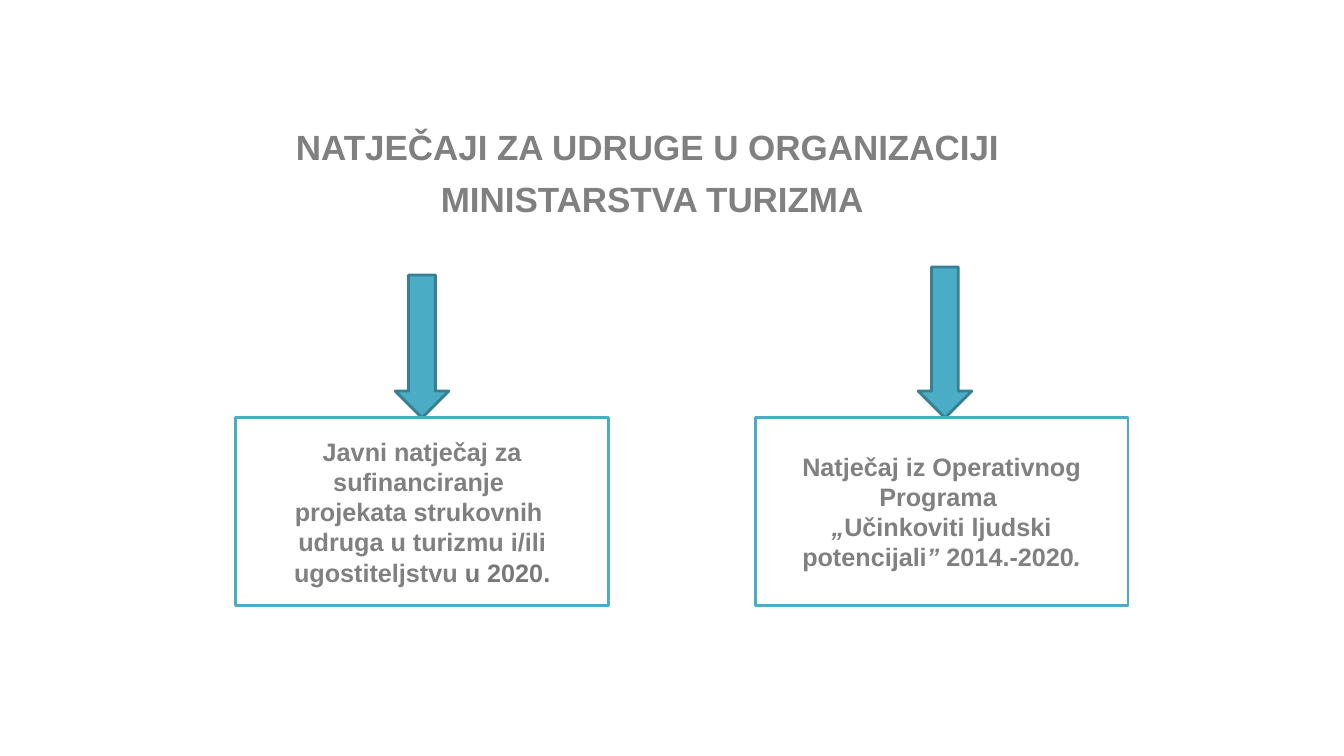
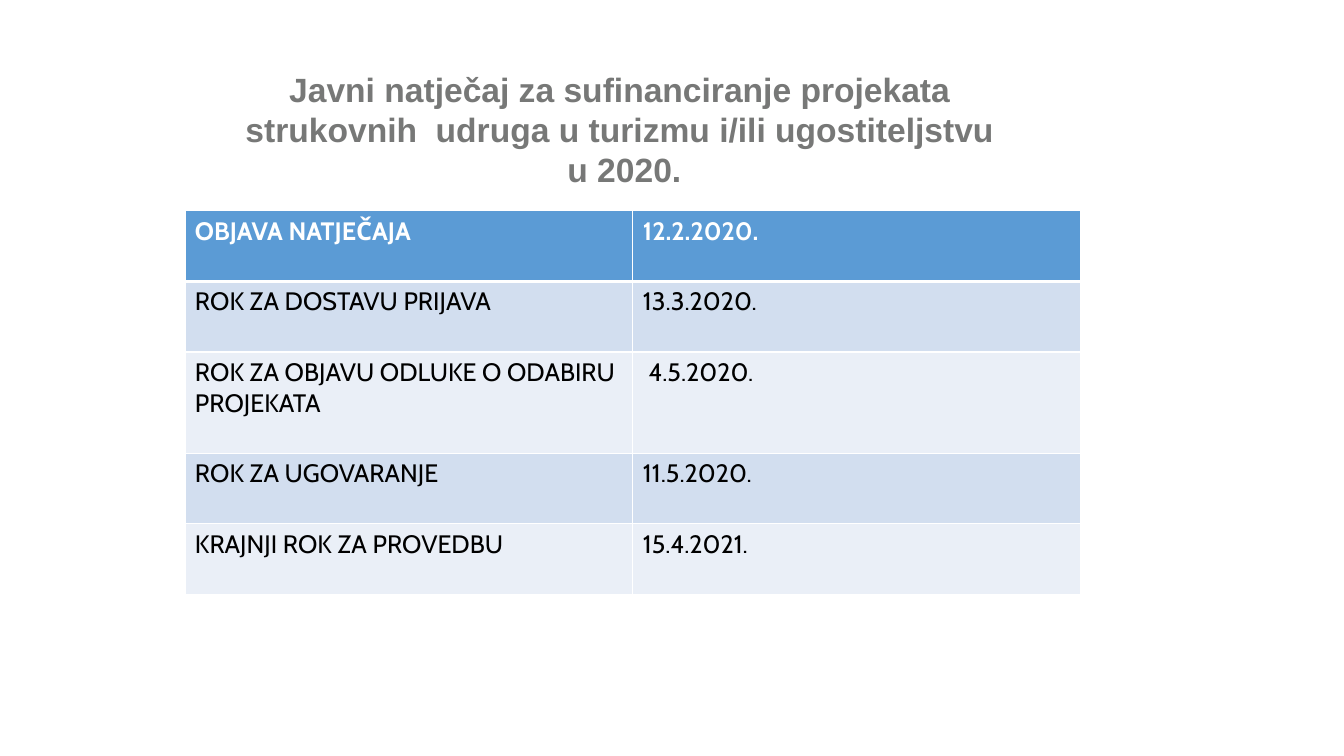
from lxml import etree
from pptx import Presentation
from pptx.dml.color import RGBColor
from pptx.enum.shapes import MSO_SHAPE
from pptx.enum.text import MSO_ANCHOR, MSO_AUTO_SIZE, PP_ALIGN
from pptx.oxml import parse_xml
from pptx.oxml.ns import nsdecls
from pptx.util import Cm, Pt

CENTER = PP_ALIGN.CENTER
TOP = MSO_ANCHOR.TOP
MIDDLE = MSO_ANCHOR.MIDDLE
NO_AUTOFIT = MSO_AUTO_SIZE.NONE
RECTANGLE = MSO_SHAPE.RECTANGLE
DOWN_ARROW = MSO_SHAPE.DOWN_ARROW

TITLE_ONLY = 5
HEADING_FONT = "Arial"
TABLE_FONT = "Cabin"
WHITE = "FFFFFF"
BLACK = "000000"
GREY = "808080"
DARK_GREY = "777877"
TEAL = "4BACC6"
DARK_TEAL = "377F92"
HEADER_BLUE = "5B9BD5"
BANDS = ["D2DEEF", "EAEFF7"]


def color(value):
    return RGBColor.from_string(value)


def write_paragraphs(text_frame, paragraphs, size):
    text_frame.word_wrap = True
    for index, runs in enumerate(paragraphs):
        paragraph = text_frame.paragraphs[0] if index == 0 else text_frame.add_paragraph()
        paragraph.alignment = CENTER
        for text, tone, italic in runs:
            if text == "\n":
                paragraph.add_line_break()
                continue
            run = paragraph.add_run()
            run.text = text
            run.font.name = HEADING_FONT
            run.font.size = Pt(size)
            run.font.bold = True
            run.font.italic = italic
            run.font.color.rgb = color(tone)


presentation = Presentation()
presentation.slide_width = Cm(33.87)
presentation.slide_height = Cm(19.05)

titles = [
    (3.33, 3.16, 26.21, 3, 25, [
        [("NATJEČAJI ZA UDRUGE U ORGANIZACIJI ", GREY, False)],
        [("MINISTARSTVA TURIZMA", GREY, False)],
    ]),
    (4.24, 1.6, 22.99, 3.5, 24, [
        [("Javni natječaj za sufinanciranje projekata ", DARK_GREY, False)],
        [
            ("strukovnih  udruga u turizmu i/ili ugostiteljstvu ", DARK_GREY, False),
            ("\n", DARK_GREY, False),
            ("u 2020.", DARK_GREY, False),
        ],
    ]),
]
slides = []
for left, top, width, height, size, paragraphs in titles:
    slide = presentation.slides.add_slide(presentation.slide_layouts[TITLE_ONLY])
    title = slide.shapes.title
    title.left, title.top, title.width, title.height = Cm(left), Cm(top), Cm(width), Cm(height)
    title.text_frame.auto_size = NO_AUTOFIT
    title.text_frame.vertical_anchor = TOP
    write_paragraphs(title.text_frame, paragraphs, size)
    slides.append(slide)
overview, schedule = slides

for index, paragraph in enumerate(overview.shapes.title.text_frame.paragraphs):
    paragraph.line_spacing = 0.9
    paragraph.space_before = Pt(10 * index)

BOX_TOP = 10.53
calls = [
    (5.94, 9.96, 6.93, [
        [("Javni natječaj za sufinanciranje ", GREY, False)],
        [("projekata strukovnih ", GREY, False)],
        [
            ("udruga u turizmu i/ili ugostiteljstvu ", GREY, False),
            ("u 2020.", DARK_GREY, False),
        ],
    ]),
    (19.03, 23.14, 6.73, [
        [
            ("Natječaj iz Operativnog Programa ", GREY, False),
            ("\n", GREY, False),
            ("„", GREY, True),
            ("Učinkoviti ljudski potencijali", GREY, False),
            ("” ", GREY, True),
            ("2014.-2020", GREY, False),
            (".", GREY, True),
        ],
    ]),
]
for box_left, arrow_left, arrow_top, paragraphs in calls:
    arrow = overview.shapes.add_shape(
        DOWN_ARROW, Cm(arrow_left), Cm(arrow_top), Cm(1.35), Cm(BOX_TOP - arrow_top))
    box = overview.shapes.add_shape(
        RECTANGLE, Cm(box_left), Cm(BOX_TOP), Cm(9.4), Cm(4.72))
    for shape, fill, line in [(arrow, TEAL, DARK_TEAL), (box, WHITE, TEAL)]:
        shape.shadow.inherit = False
        shape.fill.solid()
        shape.fill.fore_color.rgb = color(fill)
        shape.line.color.rgb = color(line)
        shape.line.width = Pt(2)
    box.text_frame.vertical_anchor = MIDDLE
    write_paragraphs(box.text_frame, paragraphs, 18)

deadlines = [
    ("OBJAVA NATJEČAJA", "12.2.2020."),
    ("ROK ZA DOSTAVU PRIJAVA", "13.3.2020."),
    ("ROK ZA OBJAVU ODLUKE O ODABIRU PROJEKATA", " 4.5.2020."),
    ("ROK ZA UGOVARANJE", "11.5.2020."),
    ("KRAJNJI ROK ZA PROVEDBU", "15.4.2021."),
]
row_heights = [1.78, 1.78, 2.55, 1.78, 1.78]
table = schedule.shapes.add_table(
    len(deadlines), 2, Cm(4.66), Cm(5.31), Cm(22.58), Cm(sum(row_heights))).table
for column in table.columns:
    column.width = Cm(11.29)
for row_index, (values, height) in enumerate(zip(deadlines, row_heights)):
    is_header = row_index == 0
    table.rows[row_index].height = Cm(height)
    for column_index, value in enumerate(values):
        cell = table.cell(row_index, column_index)
        cell.text_frame.text = value
        font = cell.text_frame.paragraphs[0].runs[0].font
        font.name = TABLE_FONT
        font.size = Pt(18)
        font.bold = is_header
        font.color.rgb = color(WHITE if is_header else BLACK)
        properties = cell._tc.get_or_add_tcPr()
        for side in ["lnL", "lnR", "lnT", "lnB"]:
            thick = (is_header and side == "lnB") or (row_index == 1 and side == "lnT")
            border = parse_xml(f'<a:{side} {nsdecls("a")} w="{Pt(3 if thick else 1)}"/>')
            solid = etree.SubElement(border, "{%s}solidFill" % border.nsmap["a"])
            etree.SubElement(solid, "{%s}srgbClr" % border.nsmap["a"], val=WHITE)
            properties.append(border)
        cell.fill.solid()
        cell.fill.fore_color.rgb = color(HEADER_BLUE if is_header else BANDS[(row_index - 1) % 2])

presentation.save("out.pptx")
